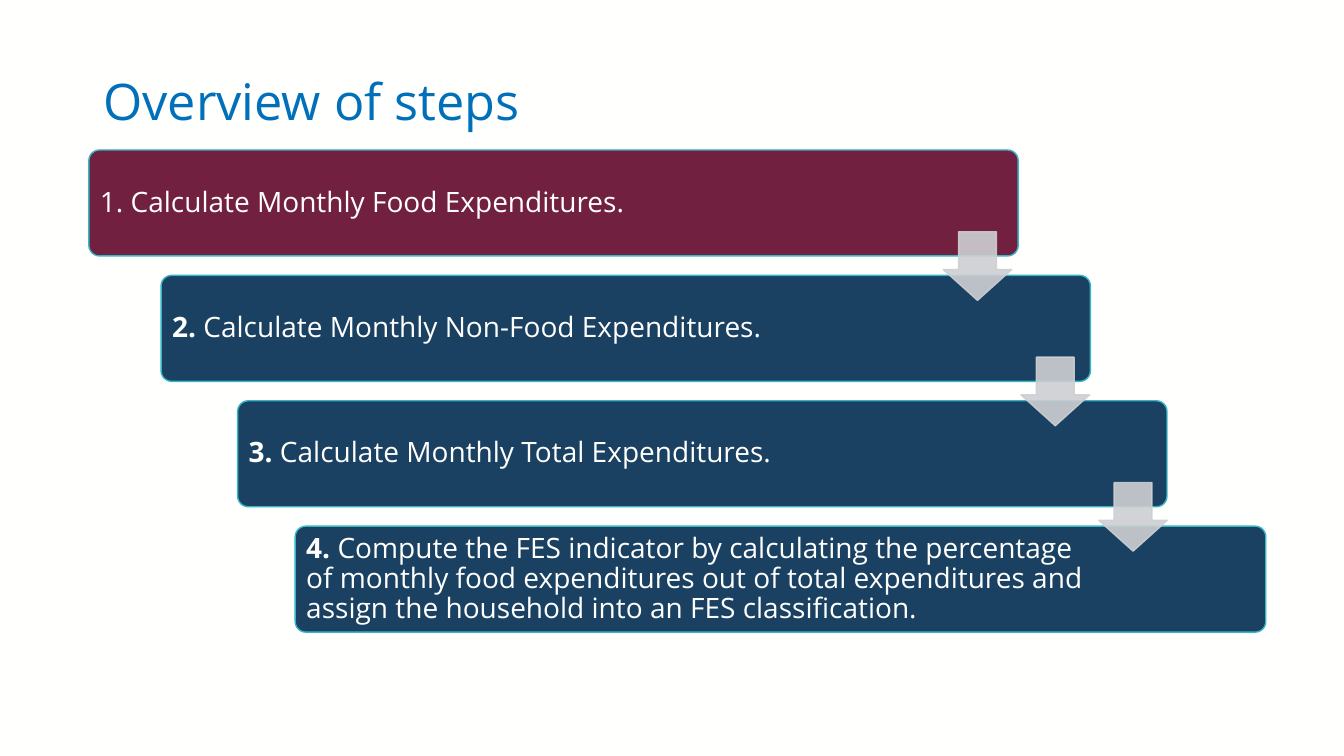
from lxml import etree
from pptx import Presentation
from pptx.dml.color import RGBColor
from pptx.enum import shapes, text
from pptx.oxml import ns
from pptx.util import Cm, Pt

TITLE = "Overview of steps"
# number, wording, left edge, width (cm), fill, bold number
STEPS = [
    ("1. ", "Calculate Monthly Food Expenditures.", 2.24, 23.42, "wine", False),
    ("2. ", "Calculate Monthly Non-Food Expenditures.", 4.06, 23.42, "navy", True),
    ("3. ", "Calculate Monthly Total Expenditures.", 5.99, 23.42, "navy", True),
    ("4. ", "Compute the FES indicator by calculating the percentage of monthly "
     "food expenditures out of total expenditures and assign the household "
     "into an FES classification.", 7.44, 24.46, "navy", True),
]
THEME = {
    "font": "Open Sans", "head": 36, "body": 20,
    "paper": "FFFFFE", "blue": "0070BA", "wine": "722040",
    "navy": "1A4161", "teal": "36B5C5", "grey": "CDCFD2",
}
TOP, STEP, TALL = 3.78, 3.16, 2.67
ARROW_LEFT, ARROW_STEP, ARROW_DROP, ARROW_SIZE = 23.77, 1.96, 2.06, 1.73


def color(name):
    return RGBColor.from_string(THEME[name])


def write(shape, runs, size, ink, pads):
    """Fill a shape with one paragraph of (wording, bold) runs."""
    frame = shape.text_frame
    frame.word_wrap = True
    frame.vertical_anchor = text.MSO_ANCHOR.MIDDLE
    (frame.margin_left, frame.margin_top,
     frame.margin_right, frame.margin_bottom) = map(Cm, pads)
    para = frame.paragraphs[0]
    para.alignment = text.PP_ALIGN.LEFT
    para.line_spacing = 0.9
    for words, bold in runs:
        run = para.add_run()
        run.text = words
        font = run.font
        font.name, font.size, font.bold = THEME["font"], Pt(THEME[size]), bold
        font.color.rgb = color(ink)


def draw(slide, kind, box, fill, line, adjust):
    shape = slide.shapes.add_shape(kind, *map(Cm, box))
    shape.shadow.inherit = False
    shape.fill.solid()
    shape.fill.fore_color.rgb = color(fill)
    shape.line.color.rgb = color(line)
    shape.line.width = Pt(1)
    for i, value in enumerate(adjust):
        shape.adjustments[i] = value
    return shape


def fade(shape, percent):
    """Set the opacity of both fill and outline."""
    for tone in shape.element.spPr.iter(ns.qn("a:srgbClr")):
        etree.SubElement(tone, ns.qn("a:alpha"), val=str(percent * 1000))


def main():
    deck = Presentation()
    deck.slide_width, deck.slide_height = Cm(33.87), Cm(19.05)
    slide = deck.slides.add_slide(deck.slide_layouts[6])
    slide.background.fill.solid()
    slide.background.fill.fore_color.rgb = color("paper")

    title = slide.shapes.add_textbox(Cm(2.36), Cm(1.02), Cm(29.29), Cm(3.2))
    write(title, [(TITLE, False)], "head", "blue", (0.25, 0.13, 0.25, 0.13))

    for i, (number, words, left, width, fill, bold) in enumerate(STEPS):
        bar = draw(slide, shapes.MSO_SHAPE.ROUNDED_RECTANGLE,
                   (left, TOP + i * STEP, width, TALL), fill, "teal", [0.1])
        write(bar, [(number, bold), (words, False)], "body", "paper",
              (0.2, 0.2, 4.05, 0.2))

    for i in range(len(STEPS) - 1):
        arrow = draw(slide, shapes.MSO_SHAPE.DOWN_ARROW,
                     (ARROW_LEFT + i * ARROW_STEP, TOP + i * STEP + ARROW_DROP,
                      ARROW_SIZE, ARROW_SIZE), "grey", "grey", [0.55, 0.45])
        fade(arrow, 90)

    deck.save("out.pptx")


if __name__ == "__main__":
    main()
